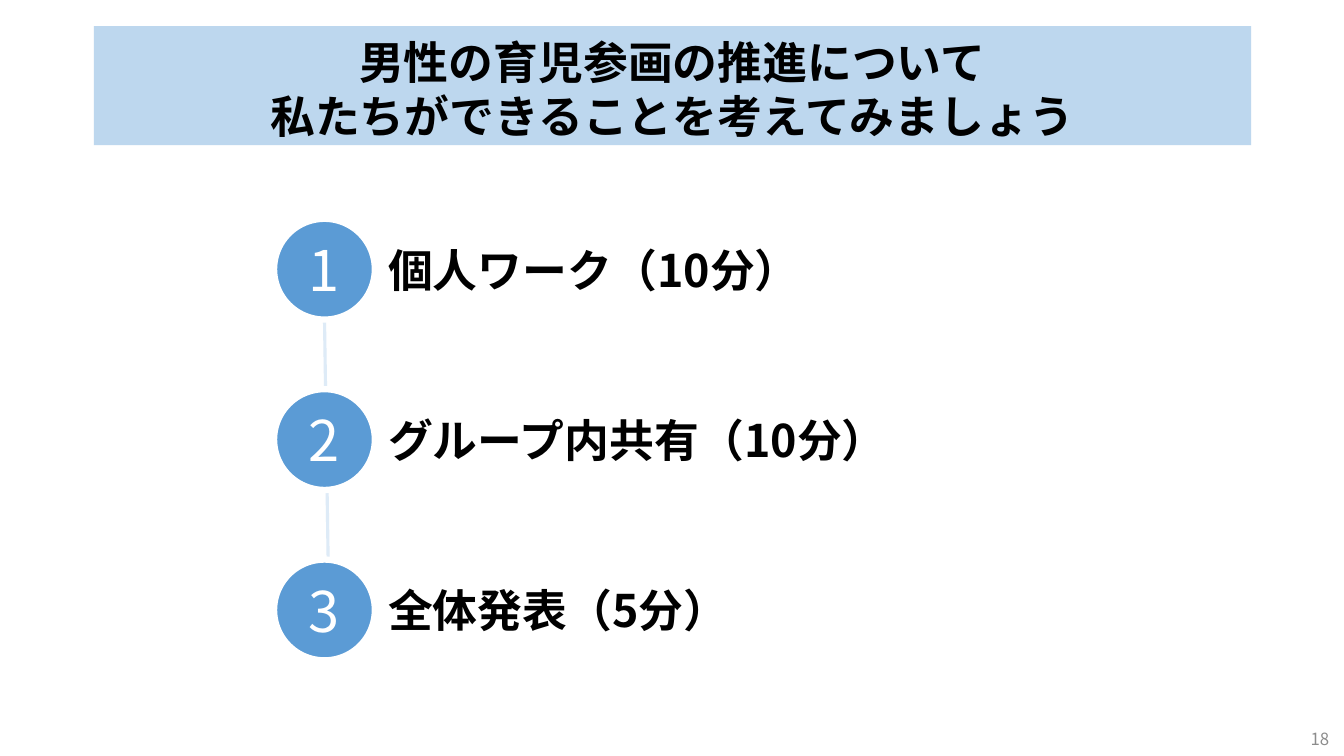
"""Build the group work slide: a title band, three timed steps and the page number."""
from lxml.etree import SubElement
from pptx import Presentation
from pptx.dml.color import RGBColor
from pptx.enum.shapes import MSO_CONNECTOR, MSO_SHAPE
from pptx.enum.text import MSO_ANCHOR, PP_ALIGN
from pptx.oxml.ns import qn
from pptx.util import Pt

FONT = "Noto Sans CJK JP"
BLACK = RGBColor(0x00, 0x00, 0x00)
WHITE = RGBColor(0xFF, 0xFF, 0xFF)
GREY = RGBColor(0x8C, 0x8C, 0x8C)
BLUE = RGBColor(0x5B, 0x9B, 0xD5)
BAND_BLUE = RGBColor(0xBD, 0xD7, 0xEE)
PALE_BLUE = RGBColor(0xDE, 0xEB, 0xF7)

TITLE_LINES = ["男性の育児参画の推進について", "私たちができることを考えてみましょう"]
STEPS = ["個人ワーク（10分）", "グループ内共有（10分）", "全体発表（5分）"]


def set_frame(frame, anchor, left, top, right, bottom):
    """Set wrapping, anchor and insets of a text frame."""
    frame.word_wrap = True
    frame.vertical_anchor = anchor
    frame.margin_left, frame.margin_top = Pt(left), Pt(top)
    frame.margin_right, frame.margin_bottom = Pt(right), Pt(bottom)


def write(paragraph, words, size, color, align=PP_ALIGN.CENTER, bold=False):
    """Add one formatted run to a paragraph."""
    paragraph.alignment = align
    run = paragraph.add_run()
    run.text = words
    font = run.font
    font.size, font.bold, font.name = Pt(size), bold, FONT
    font.color.rgb = color
    SubElement(run._r.get_or_add_rPr(), qn("a:ea"), typeface=FONT)


def add_filled(slide, preset, box, color):
    """Add a preset shape with a plain fill and no shadow."""
    shape = slide.shapes.add_shape(preset, *map(Pt, box))
    shape.shadow.inherit = False
    shape.fill.solid()
    shape.fill.fore_color.rgb = color
    return shape


def add_title(slide, box):
    """Draw the title band."""
    band = add_filled(slide, MSO_SHAPE.RECTANGLE, box, BAND_BLUE)
    band.line.fill.background()
    frame = band.text_frame
    set_frame(frame, MSO_ANCHOR.TOP, 7.2, 5.5, 7.2, 1.7)
    for index, line in enumerate(TITLE_LINES):
        paragraph = frame.add_paragraph() if index else frame.paragraphs[0]
        paragraph.line_spacing = Pt(38.9)
        write(paragraph, line, 32, BLACK, bold=True)


def add_step(slide, box, number, task):
    """Draw a numbered circle and its task in one row."""
    left, top, width, height = box
    diameter = 72
    circle_box = (left, top + (height - diameter) / 2, diameter, diameter)
    circle = add_filled(slide, MSO_SHAPE.OVAL, circle_box, BLUE)
    circle.line.color.rgb = WHITE
    circle.line.width = Pt(4.5)
    set_frame(circle.text_frame, MSO_ANCHOR.MIDDLE, 7.2, 3.6, 7.2, 3.6)
    write(circle.text_frame.paragraphs[0], str(number), 40, WHITE)

    label_box = (left + diameter, top, width - diameter, height)
    label = slide.shapes.add_textbox(*map(Pt, label_box)).text_frame
    set_frame(label, MSO_ANCHOR.MIDDLE, 9.4, 9.4, 9.4, 9.4)
    write(label.paragraphs[0], task, 32, BLACK, PP_ALIGN.LEFT, True)


def add_steps(slide, box):
    """Draw the steps at equal pitch over their joining line."""
    left, top, width, height = box
    row_height = 85
    pitch = (height - row_height) / (len(STEPS) - 1)
    ends = (left + 36, top + 78.5, left + 38.9, top + 269.3)
    thread = slide.shapes.add_connector(MSO_CONNECTOR.STRAIGHT, *map(Pt, ends))
    thread.line.color.rgb = PALE_BLUE
    thread.line.width = Pt(2.25)
    SubElement(thread._element.spPr, qn("a:effectLst"))
    for index, task in enumerate(STEPS):
        row = (left, top + index * pitch, width, row_height)
        add_step(slide, row, index + 1, task)


def add_page_number(slide, box):
    """Write the page number."""
    frame = slide.shapes.add_textbox(*map(Pt, box)).text_frame
    set_frame(frame, MSO_ANCHOR.TOP, 3.6, 2, 3.6, 2)
    write(frame.paragraphs[0], "18", 12, GREY)


def main():
    """Build and save the slide."""
    deck = Presentation()
    deck.slide_width, deck.slide_height = Pt(960), Pt(540)
    slide = deck.slides.add_slide(deck.slide_layouts[6])
    add_steps(slide, (195.8, 149.8, 747.4, 328.4))
    add_page_number(slide, (927.4, 518.4, 31, 18))
    add_title(slide, (67, 18.7, 826.6, 85))
    deck.save("out.pptx")


if __name__ == "__main__":
    main()
